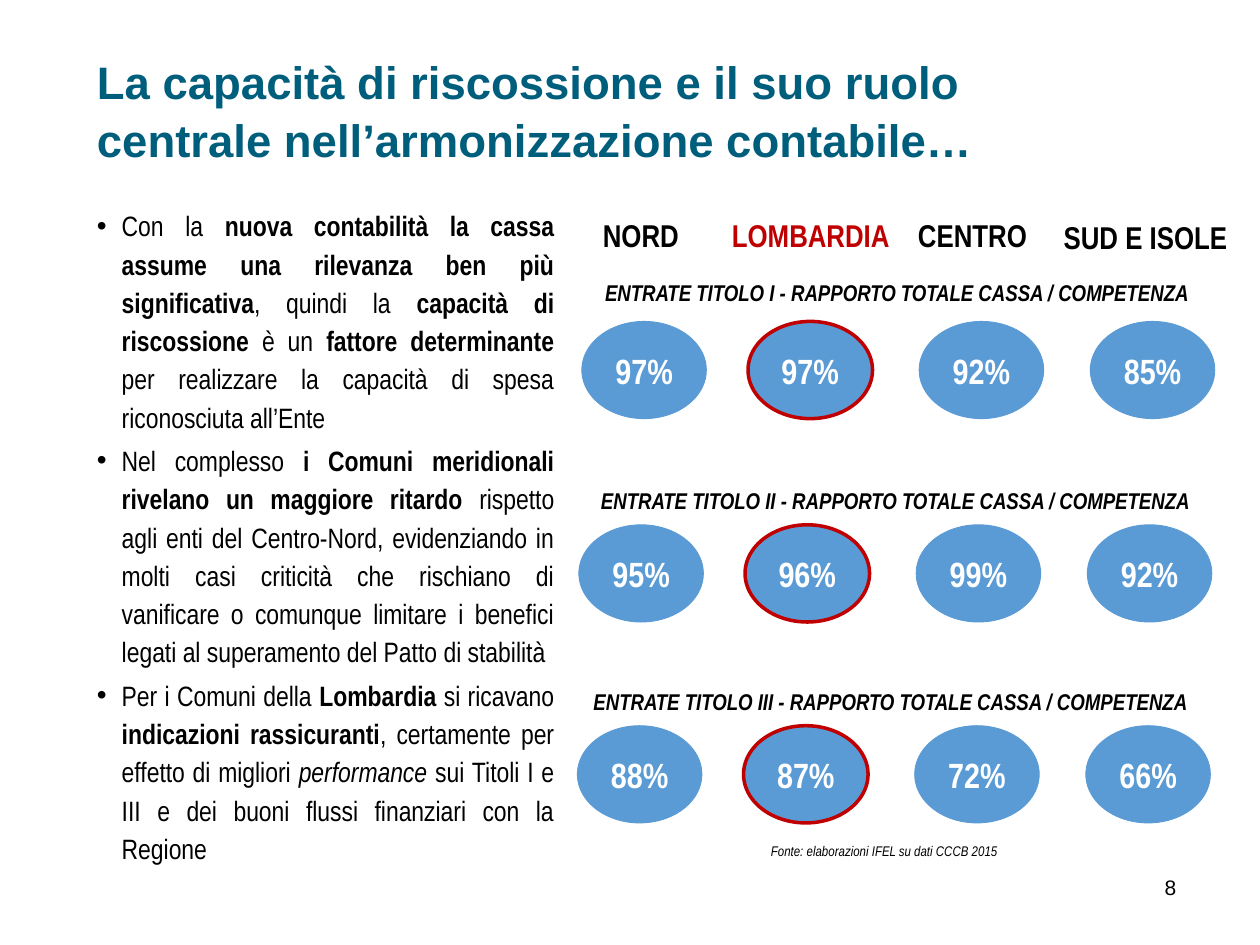
import pptx
import pptx.dml.color
import pptx.enum.shapes
import pptx.enum.text
import pptx.util

Cm = pptx.util.Cm
Pt = pptx.util.Pt
RGBColor = pptx.dml.color.RGBColor
ALIGN = pptx.enum.text.PP_ALIGN
ANCHOR = pptx.enum.text.MSO_ANCHOR

TEAL = RGBColor(0x00, 0x5E, 0x7D)
BLACK = RGBColor(0x00, 0x00, 0x00)
WHITE = RGBColor(0xFF, 0xFF, 0xFF)
RED = RGBColor(0xC0, 0x00, 0x00)
BLUE = RGBColor(0x5B, 0x9B, 0xD5)
NARROW = "Arial Narrow"

TITLE = "La capacità di riscossione e il suo ruolo centrale nell’armonizzazione contabile…"
SOURCE = "Fonte: elaborazioni IFEL su dati CCCB 2015"
PAGE = "8"

POINTS = [
    [("Con la ", ""),
     ("nuova contabilità la cassa assume una rilevanza ben più significativa", "bold"),
     (", quindi la", ""), (" capacità di riscossione", "bold"), (" è un ", ""),
     ("fattore determinante", "bold"),
     (" per realizzare la capacità di spesa riconosciuta all’Ente", "")],
    [("Nel complesso ", ""),
     ("i Comuni meridionali rivelano un maggiore ritardo", "bold"),
     (" rispetto agli enti del Centro-Nord, evidenziando in molti casi criticità che "
      "rischiano di vanificare o comunque limitare i benefici legati al superamento "
      "del Patto di stabilità", "")],
    [("Per i Comuni della ", ""), ("Lombardia ", "bold"), ("si ricavano ", ""),
     ("indicazioni rassicuranti", "bold"),
     (", certamente per effetto di migliori ", ""), ("performance", "italic"),
     (" sui Titoli I e III e dei buoni flussi finanziari con la Regione", "")],
]

AREAS = [
    ("NORD", (11.79, 4.24, 2.26, 1.02), BLACK, ALIGN.CENTER),
    ("LOMBARDIA", (14.4, 4.24, 3.89, 1.02), RED, ALIGN.CENTER),
    ("CENTRO", (17.37, 4.24, 4.47, 1.02), BLACK, ALIGN.CENTER),
    ("SUD E ISOLE", (20.98, 4.27, 4.01, 1.02), BLACK, ALIGN.RIGHT),
]

REVENUES = [
    ("I", (11.84, 5.49, 12.47, 0.81), (11.73, 6.48), ("97%", "97%", "92%", "85%")),
    ("II", (11.81, 9.68, 12.47, 0.81), (11.67, 10.58), ("95%", "96%", "99%", "92%")),
    ("III", (11.66, 13.74, 12.57, 0.81), (11.64, 14.63), ("88%", "87%", "72%", "66%")),
]
AREA_OFFSETS = (0, 3.35, 6.8, 10.25)
OVAL_SIZE = (2.51, 1.96)
HIGHLIGHTED = 1


def apply(target, formats):
    for name, value in formats.items():
        setattr(target, name, value)


def place(shape, box):
    apply(shape, dict(zip(("left", "top", "width", "height"), map(Cm, box))))


def write(frame, text, color, align=ALIGN.CENTER, **font_formats):
    line = frame.paragraphs[0]
    line.alignment = align
    run = line.add_run()
    run.text = text
    apply(run.font, {"name": NARROW, **font_formats})
    run.font.color.rgb = color
    return line


def add_label(slide, box, text, color=BLACK, align=ALIGN.CENTER, **font_formats):
    label = slide.shapes.add_textbox(*map(Cm, box))
    label.text_frame.word_wrap = True
    return write(label.text_frame, text, color, align, **font_formats)


def add_rate(slide, box, rate, highlighted):
    oval = slide.shapes.add_shape(pptx.enum.shapes.MSO_SHAPE.OVAL, *map(Cm, box))
    oval.shadow.inherit = False
    oval.fill.solid()
    oval.fill.fore_color.rgb = BLUE
    oval.line.color.rgb = RED if highlighted else BLUE
    oval.line.width = Pt(2 if highlighted else 0.5)
    apply(oval.text_frame, {"margin_left": 0, "margin_right": 0,
                            "vertical_anchor": ANCHOR.MIDDLE})
    write(oval.text_frame, rate, WHITE, size=Pt(20), bold=True)


def fill_points(body):
    place(body, (1.7, 3.99, 9.73, 14.05))
    frame = body.text_frame
    frame.auto_size = pptx.enum.text.MSO_AUTO_SIZE.NONE
    for number, pieces in enumerate(POINTS):
        point = frame.add_paragraph() if number else frame.paragraphs[0]
        apply(point, {"alignment": ALIGN.JUSTIFY, "line_spacing": 1.14,
                      "space_before": Pt(3 if number else 0)})
        properties = point._p.get_or_add_pPr()
        properties.set("marL", str(Cm(0.5)))
        properties.set("indent", str(Cm(-0.5)))
        for text, style in pieces:
            run = point.add_run()
            run.text = text
            apply(run.font, {"name": NARROW, "size": Pt(16),
                             "bold": style == "bold", "italic": style == "italic"})
            run.font.color.rgb = BLACK


def main():
    deck = pptx.Presentation()
    apply(deck, {"slide_width": Cm(25.4), "slide_height": Cm(19.05)})
    slide = deck.slides.add_slide(deck.slide_layouts[1])

    title = slide.shapes.title
    place(title, (1.7, 0.91, 20.27, 2.54))
    apply(title.text_frame, {"auto_size": pptx.enum.text.MSO_AUTO_SIZE.NONE,
                             "vertical_anchor": ANCHOR.MIDDLE})
    heading = write(title.text_frame, TITLE, TEAL, ALIGN.LEFT,
                    name="Arial", size=Pt(26), bold=True)
    heading.line_spacing = 1.07

    fill_points(slide.placeholders[1])

    for area, box, color, align in AREAS:
        add_label(slide, box, area, color, align, size=Pt(18), bold=True)

    for numeral, box, (left, top), rates in REVENUES:
        caption = f"ENTRATE TITOLO {numeral} - RAPPORTO TOTALE CASSA / COMPETENZA"
        line = add_label(slide, box, caption, size=Pt(13), bold=True, italic=True)
        line.space_after = Pt(2)
        for column, (offset, rate) in enumerate(zip(AREA_OFFSETS, rates)):
            add_rate(slide, (left + offset, top, *OVAL_SIZE), rate, column == HIGHLIGHTED)

    add_label(slide, (14.96, 16.87, 5.74, 0.61), SOURCE, size=Pt(8), italic=True)
    add_label(slide, (22.58, 17.5, 2.03, 1.27), PAGE, name="Arial", size=Pt(12))

    deck.save("out.pptx")


if __name__ == "__main__":
    main()
